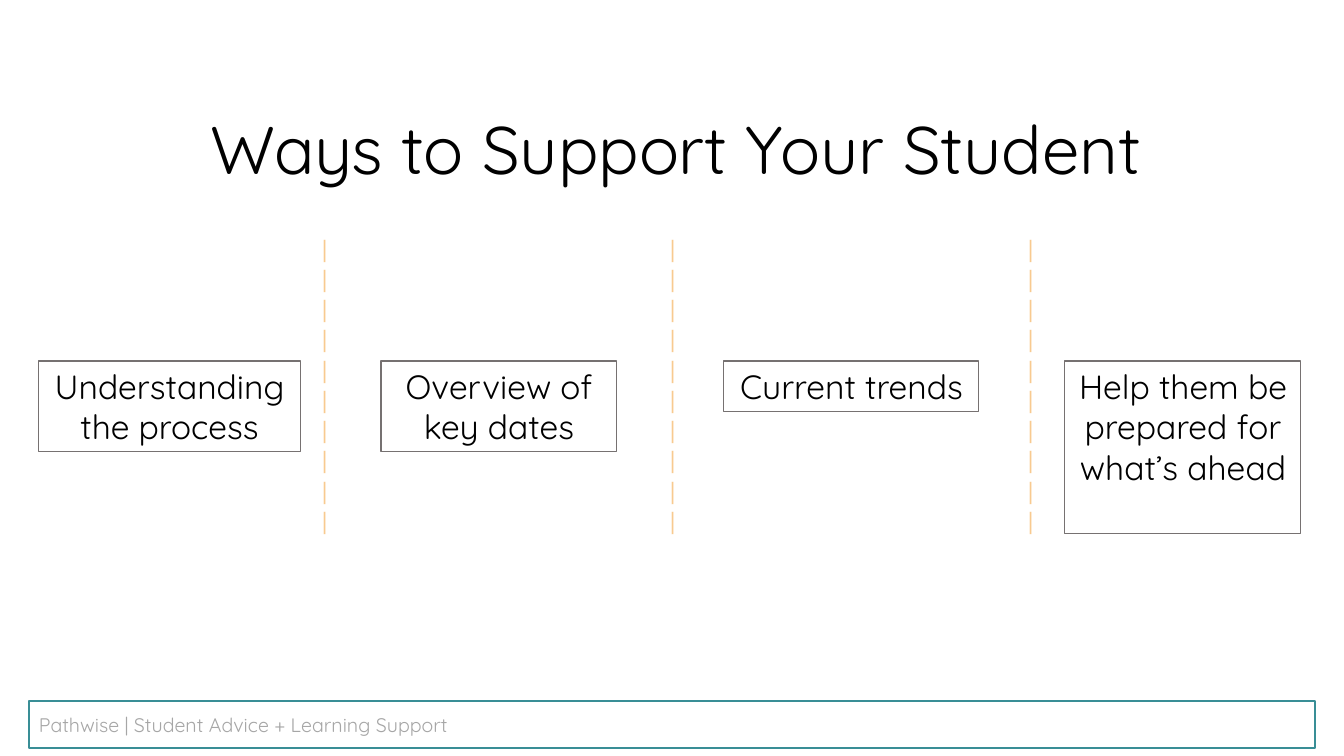
import pptx
import pptx.util
import pptx.dml.color
import pptx.enum.shapes
import pptx.enum.text

PX = 914400 / 100.8
FONT = "Quicksand"
HUES = {"ink": "000000", "edge": "767171", "teal": "398E96",
        "grey": "A6A6A6", "sand": "F8CA90"}
ALIGN = pptx.enum.text.PP_ALIGN
ANCHOR = pptx.enum.text.MSO_ANCHOR


def size(num):
    """Turn px into EMU."""
    return pptx.util.Emu(round(num * PX))


def tint(name):
    """Look up a colour by name."""
    return pptx.dml.color.RGBColor.from_string(HUES[name])


def write(frame, lines, points, hue, font=FONT, align=ALIGN.LEFT, anchor=ANCHOR.TOP):
    """Fill a text frame with one styled run per line."""
    frame.word_wrap = True
    frame.auto_size = pptx.enum.text.MSO_AUTO_SIZE.NONE
    frame.vertical_anchor = anchor
    for rank, line in enumerate(lines):
        para = frame.add_paragraph() if rank else frame.paragraphs[0]
        para.alignment = align
        run = para.add_run()
        run.text = line
        run.font.size = pptx.util.Pt(points)
        run.font.name = font
        run.font.color.rgb = tint(hue)


def head(slide, text, left, top, width, height):
    """Place and fill the title."""
    title = slide.shapes.title
    title.left, title.top = size(left), size(top)
    title.width, title.height = size(width), size(height)
    write(title.text_frame, [text], 48, "ink")


def box(slide, left, top, width, height, edge, weight):
    """Add an unfilled outlined box."""
    shape = slide.shapes.add_shape(
        pptx.enum.shapes.MSO_SHAPE.RECTANGLE,
        size(left), size(top), size(width), size(height))
    shape.shadow.inherit = False
    shape.fill.background()
    shape.line.color.rgb = tint(edge)
    shape.line.width = pptx.util.Pt(weight)
    return shape


def fence(slide, left):
    """Add a column of upright bars."""
    frame = slide.shapes.add_textbox(
        size(left), size(229), size(13), size(315)).text_frame
    frame.margin_left = frame.margin_right = size(3)
    frame.margin_top = frame.margin_bottom = size(4)
    write(frame, ["|"] * 10, 18, "sand", "Calibri")


def main():
    """Build and save the slide."""
    deck = pptx.Presentation()
    deck.slide_width, deck.slide_height = size(1344), size(756)
    slide = deck.slides.add_slide(deck.slide_layouts[5])

    head(slide, "Ways to Support Your Student", 200, 102, 995, 92)

    foot = box(slide, 29, 701, 1286, 47, "teal", 1)
    write(foot.text_frame, ["Pathwise | Student Advice + Learning Support"],
          14, "grey", anchor=ANCHOR.MIDDLE)

    ways = [("Understanding the process", 38, 263, 91),
            ("Overview of key dates", 381, 236, 91),
            ("Current trends", 724, 255, 51),
            ("Help them be prepared for what’s ahead", 1065, 236, 173)]
    for text, left, width, height in ways:
        card = box(slide, left, 361, width, height, "edge", 0.75)
        write(card.text_frame, [text], 24, "ink", align=ALIGN.CENTER)

    for left in (316, 664, 1022):
        fence(slide, left)

    deck.save("out.pptx")


if __name__ == "__main__":
    main()
